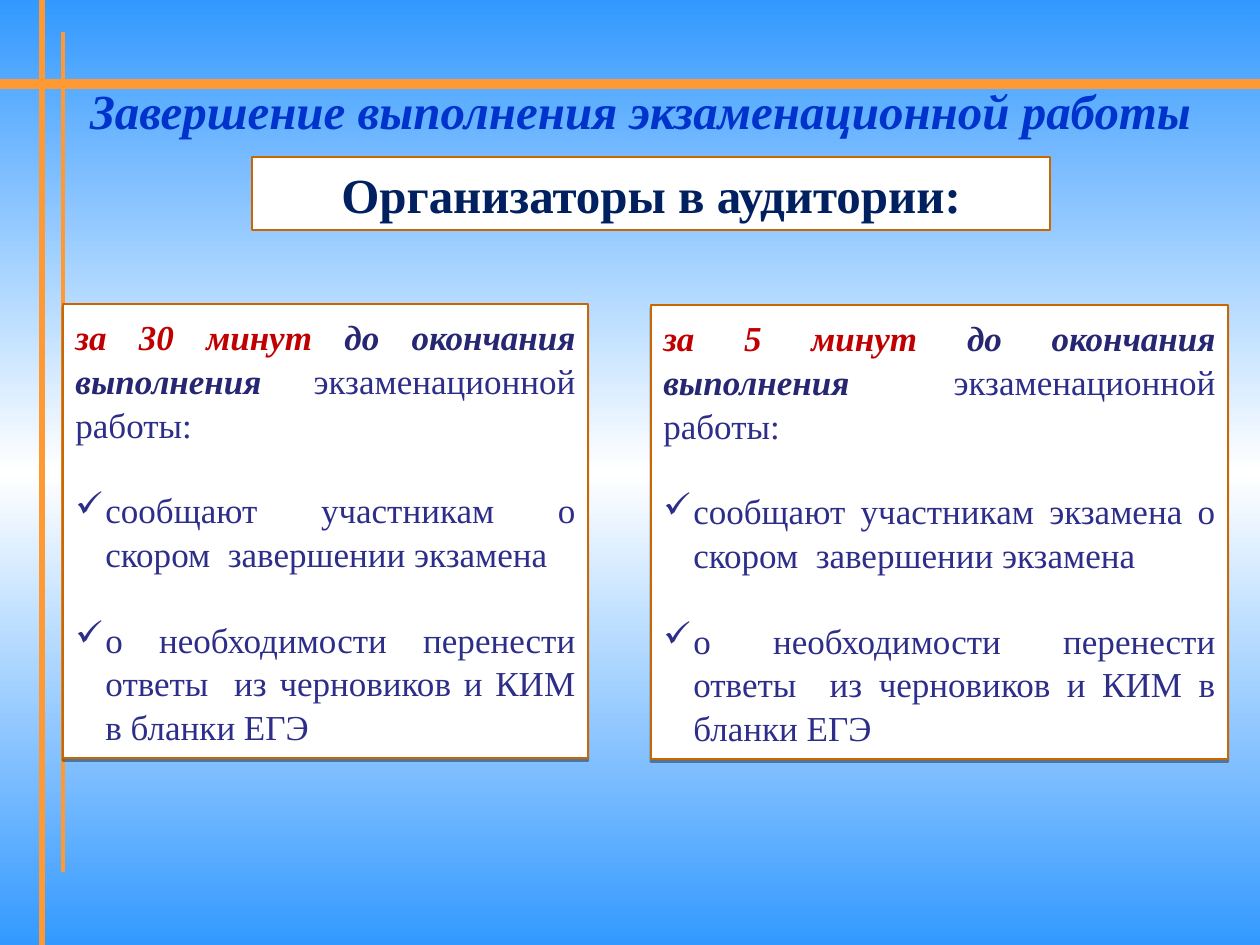
from copy import deepcopy

from lxml.etree import SubElement
from pptx import Presentation
from pptx.dml.color import RGBColor
from pptx.enum.shapes import MSO_CONNECTOR as CONN, MSO_SHAPE as SHAPE
from pptx.enum.text import MSO_ANCHOR as ANCHOR, PP_ALIGN as ALIGN
from pptx.oxml.ns import qn
from pptx.util import Emu, Pt

COLORS = {
    "sky": "3399FF", "white": "FFFFFF", "rule": "FF9933", "border": "CC6600",
    "title": "0033CC", "heading": "002060", "accent": "C00000",
    "strong": "262673", "body": "2D2D8A", "shadow": "000000",
}


def px(n):
    return Emu(round(n * 914400 / 126))


def rgb(name):
    return RGBColor.from_string(COLORS[name])


class Deck:
    font = "Times New Roman"
    body_size = 20
    head_size = 28
    line_spacing = 1.045
    item_gap = 24
    indent = 30

    def __init__(self, width, height):
        self.prs = Presentation()
        self.prs.slide_width, self.prs.slide_height = px(width), px(height)
        self.s = self.prs.slides.add_slide(self.prs.slide_layouts[5])

    def background(self, *names):
        fill = self.s.background.fill
        fill.gradient()
        fill.gradient_angle = 270
        stops = self.s._element.find(".//" + qn("a:gsLst"))
        while len(stops) < len(names):
            stops.append(deepcopy(stops[0]))
        for i, (stop, name) in enumerate(zip(fill.gradient_stops, names)):
            stop.position = i / (len(names) - 1)
            stop.color.rgb = rgb(name)

    def rule(self, x1, y1, x2, y2, width):
        line = self.s.shapes.add_connector(
            CONN.STRAIGHT, px(x1), px(y1), px(x2), px(y2))
        line.line.color.rgb = rgb("rule")
        line.line.width = Pt(width)
        SubElement(line._element.spPr, qn("a:effectLst"))

    def run(self, p, text, color, size, bold=False, italic=False):
        r = p.add_run()
        r.text = text
        f = r.font
        f.name, f.size, f.bold, f.italic = self.font, Pt(size), bold, italic
        f.color.rgb = rgb(color)

    def title(self, text, x, y, w, h):
        sp = self.s.shapes.title
        sp.left, sp.top, sp.width, sp.height = px(x), px(y), px(w), px(h)
        self.s.shapes._spTree.append(sp._element)  # in front of the rules
        tf = sp.text_frame
        tf.word_wrap, tf.vertical_anchor = True, ANCHOR.MIDDLE
        p = tf.paragraphs[0]
        p.alignment = ALIGN.CENTER
        self.run(p, text, "title", self.head_size, True, True)

    def box(self, x, y, w, h):
        sp = self.s.shapes.add_shape(SHAPE.RECTANGLE, px(x), px(y), px(w), px(h))
        sp.shadow.inherit = False
        sp.fill.solid()
        sp.fill.fore_color.rgb = rgb("white")
        sp.line.color.rgb = rgb("border")
        sp.line.width = Pt(1.5)
        sp.text_frame.word_wrap = True
        sp.text_frame.vertical_anchor = ANCHOR.MIDDLE
        return sp

    def heading(self, text, x, y, w, h):
        p = self.box(x, y, w, h).text_frame.paragraphs[0]
        p.alignment = ALIGN.CENTER
        self.run(p, text, "heading", self.head_size, True)

    def drop_shadow(self, sp):
        effects = sp._element.spPr.find(qn("a:effectLst"))
        shadow = SubElement(effects, qn("a:outerShdw"), blurRad="0",
                            dist=str(Pt(1.6)), dir="5400000", rotWithShape="0")
        color = SubElement(shadow, qn("a:srgbClr"), val=COLORS["shadow"])
        SubElement(color, qn("a:alpha"), val="38000")

    def bullet(self, p):
        pPr = p._p.get_or_add_pPr()
        pPr.set("marL", str(px(self.indent)))
        pPr.set("indent", str(-px(self.indent)))
        SubElement(pPr, qn("a:buChar"), char="✓")

    def card(self, when, items, x, y, w, h):
        sp = self.box(x, y, w, h)
        self.drop_shadow(sp)
        tf = sp.text_frame
        tf.margin_top = tf.margin_bottom = px(15)
        p = tf.paragraphs[0]
        p.alignment, p.line_spacing = ALIGN.JUSTIFY, self.line_spacing
        self.run(p, when, "accent", self.body_size, True, True)
        self.run(p, "до окончания выполнения ", "strong", self.body_size, True, True)
        self.run(p, "экзаменационной работы:", "body", self.body_size)
        for item in items:
            p = tf.add_paragraph()
            p.alignment, p.line_spacing = ALIGN.JUSTIFY, self.line_spacing
            p.space_before = Pt(self.item_gap)
            self.bullet(p)
            self.run(p, item, "body", self.body_size)


def main():
    deck = Deck(1260, 945)

    # Background and rules
    deck.background("sky", "white", "sky")
    deck.rule(0, 84, 1260, 84, 6)
    deck.rule(42, 0, 42, 945, 3)
    deck.rule(63, 32, 63, 872, 2.25)

    # Title and heading
    deck.title("Завершение выполнения экзаменационной работы", 63, 73, 1155, 73)

    # Reminder cards
    transfer = "о необходимости перенести ответы  из черновиков и КИМ в бланки ЕГЭ"
    deck.card("за 30 минут ",
              ["сообщают участникам о скором  завершении экзамена", transfer],
              63, 304, 525, 454)
    deck.card("за 5 минут ",
              ["сообщают участникам экзамена о скором  завершении экзамена", transfer],
              651, 305, 577, 454)

    deck.heading("Организаторы в аудитории:", 252, 157, 798, 73)

    deck.prs.save("out.pptx")


if __name__ == "__main__":
    main()
